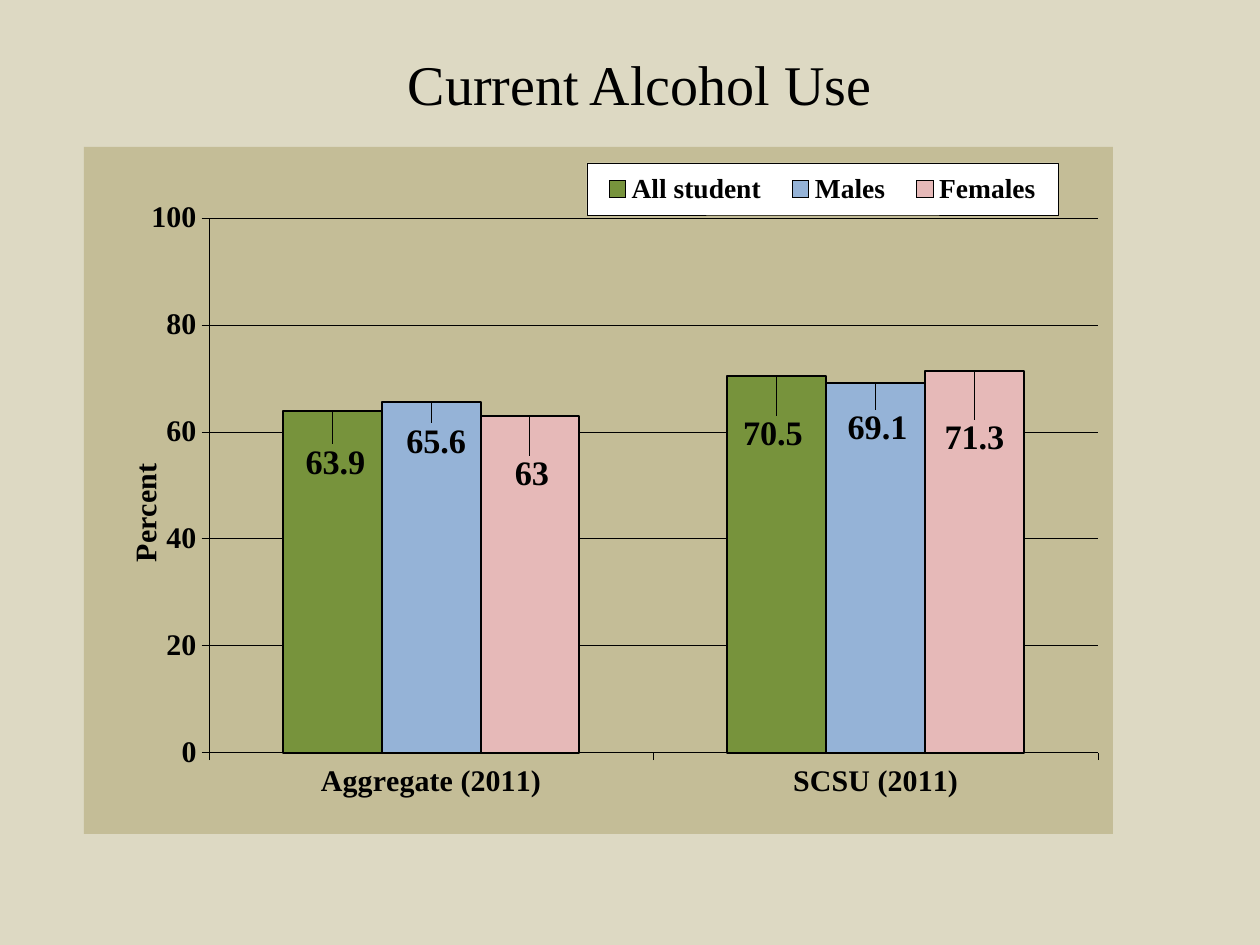
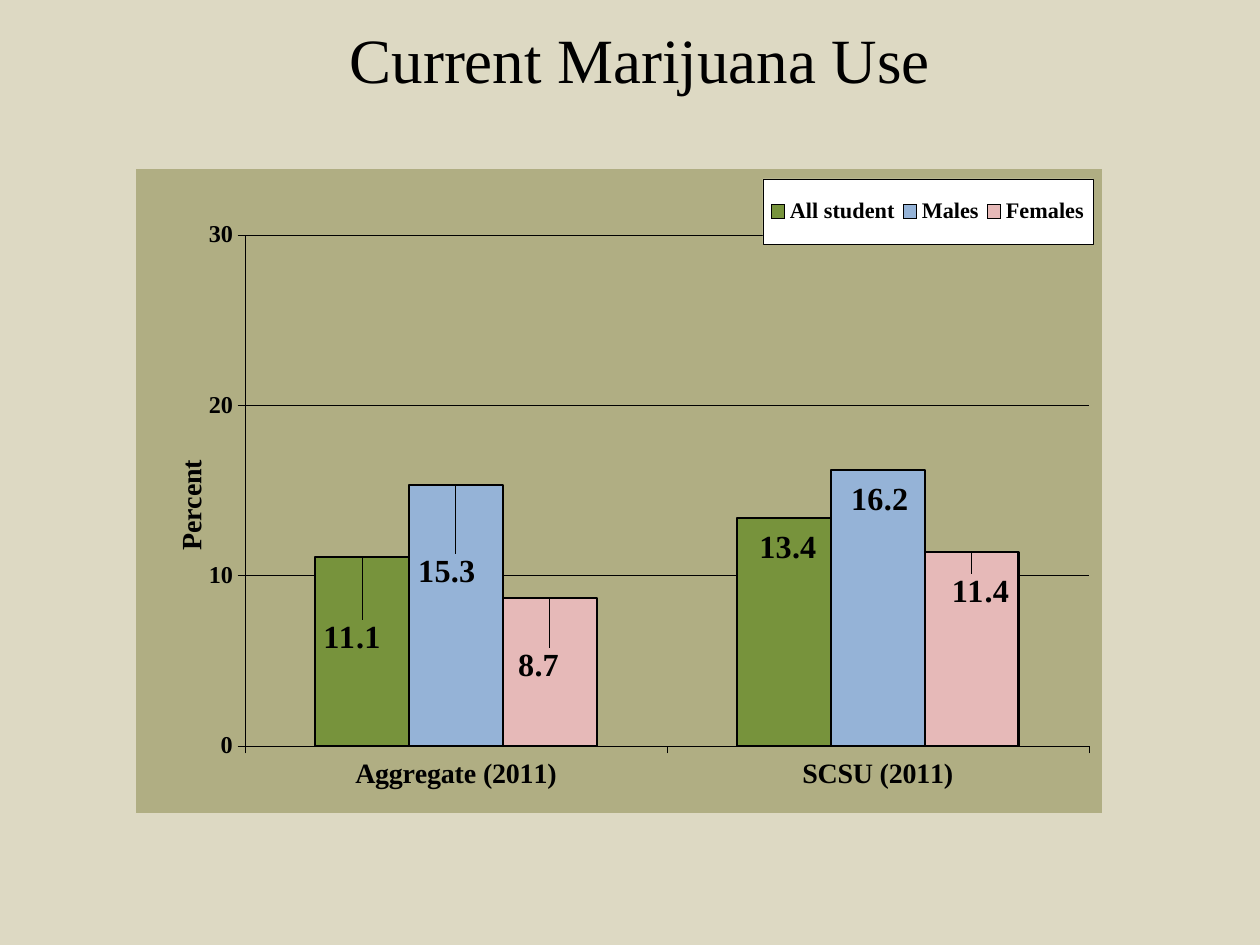
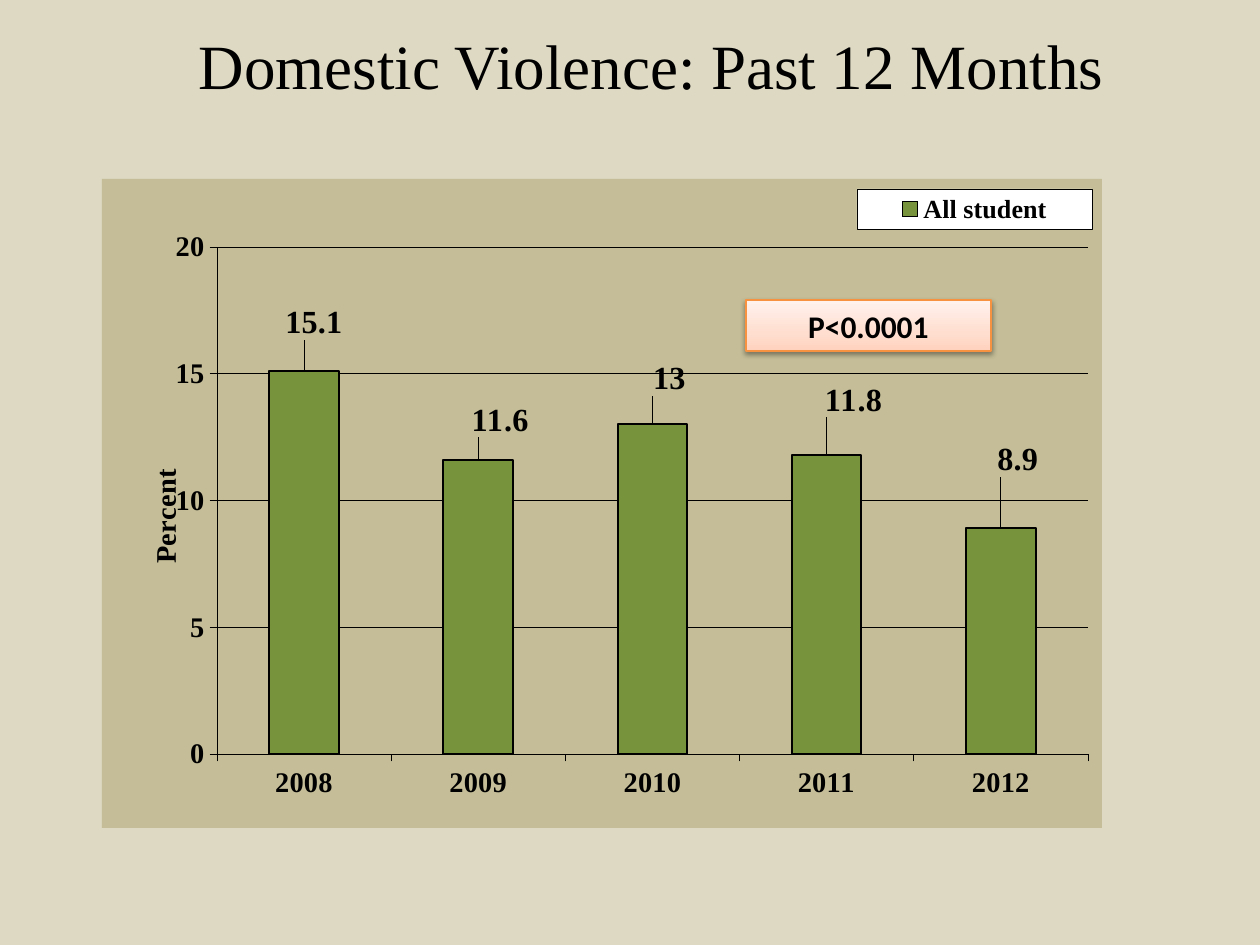
"""Build three survey slides, each with a title and a column chart."""
from copy import deepcopy

from pptx import Presentation
from pptx.chart.data import CategoryChartData
from pptx.dml.color import RGBColor
from pptx.enum.chart import XL_CHART_TYPE, XL_LABEL_POSITION, XL_LEGEND_POSITION, XL_TICK_LABEL_POSITION, XL_TICK_MARK
from pptx.enum.shapes import MSO_SHAPE
from pptx.enum.text import MSO_ANCHOR, PP_ALIGN
from pptx.oxml import parse_xml
from pptx.oxml.ns import nsdecls, qn
from pptx.util import Pt

PX = 914400 / 126
SERIF = "Times New Roman"
COLORS = {
    "background": "DDD9C3", "khaki": "C4BD97", "olive": "B0AE83",
    "black": "000000", "white": "FFFFFF", "badge line": "F69240",
    "All student": "77933C", "Males": "95B3D7", "Females": "E6B9B8",
}
BADGE_STOPS = [(0, "FFD2BD"), (0.35, "FFDED0"), (1, "FFF2ED")]
FILL = '<c:spPr %s><a:solidFill><a:srgbClr val="%s"/></a:solidFill>%s</c:spPr>'
NO_LINE = "<a:ln><a:noFill/></a:ln>"
BLACK_LINE = '<a:ln w="3810"><a:solidFill><a:srgbClr val="000000"/></a:solidFill></a:ln>'

SLIDES = [
    {
        "title": "Current Alcohol Use", "title size": 32, "title box": (73, 21, 1134, 189),
        "chart box": (84, 147, 1029, 687), "fill": "khaki",
        "plot box": (125, 71, 889, 535), "legend box": (503, 16, 471, 52), "axis title at": (37, 311),
        "sizes": {"category": 17.1, "value": 17.1, "legend": 15.7, "label": 19.6},
        "scale": (100, 20), "categories": ["Aggregate (2011)", "SCSU (2011)"],
        "series": {"All student": [63.9, 70.5], "Males": [65.6, 69.1], "Females": [63, 71.3]},
        "label offsets": [[(3, 76), (-4, 83)], [(5, 64), (2, 69)], [(2, 83), (0, 91)]],
    },
    {
        "title": "Current Marijuana Use", "title size": 36, "title box": (73, 21, 1134, 147),
        "chart box": (136, 169, 966, 644), "fill": "olive",
        "plot box": (109, 66, 844, 511), "legend box": (627, 10, 330, 65), "axis title at": (32, 286),
        "sizes": {"category": 16, "value": 13.8, "legend": 12.7, "label": 18.4},
        "scale": (30, 10), "categories": ["Aggregate (2011)", "SCSU (2011)"],
        "series": {"All student": [11.1, 13.4], "Males": [15.3, 16.2], "Females": [8.7, 11.4]},
        "label offsets": [[(-10, 103), (4, 52)], [(-9, 109), (2, 52)], [(-11, 90), (9, 62)]],
    },
    {
        "title": "Domestic Violence: Past 12 Months", "title size": 36, "title box": (116, 21, 1071, 158),
        "chart box": (102, 179, 1000, 649), "fill": "khaki",
        "plot box": (115, 68, 871, 507), "legend box": (755, 10, 235, 40), "axis title at": (39, 285),
        "sizes": {"category": 16.2, "value": 16.2, "legend": 14.9, "label": 18.4},
        "scale": (20, 5), "categories": ["2008", "2009", "2010", "2011", "2012"],
        "series": {"All student": [15.1, 11.6, 13, 11.8, 8.9]},
        "label offsets": [[(10, -26), (22, -17), (17, -23), (27, -32), (17, -46)]],
    },
]


def write_text(shape, text, size, font=SERIF, bold=False, bottom=6):
    """Write one centred line, with the bottom inset in px."""
    frame = shape.text_frame
    frame.word_wrap = True
    frame.vertical_anchor = MSO_ANCHOR.MIDDLE
    frame.margin_bottom = round(bottom * PX)
    paragraph = frame.paragraphs[0]
    paragraph.alignment = PP_ALIGN.CENTER
    run = paragraph.add_run()
    run.text = text
    run.font.size = Pt(size)
    run.font.name = font
    run.font.bold = bold
    run.font.color.rgb = RGBColor.from_string(COLORS["black"])


def place(element, index, chart_box, box, mode="edge", target=""):
    """Give a chart part a manual layout, from px measured inside the chart."""
    for layout in element.findall(qn("c:layout")):
        element.remove(layout)
    fractions = [length / chart_box[2 + number % 2] for number, length in enumerate(box)]
    modes = f'<c:xMode val="{mode}"/><c:yMode val="{mode}"/>' if mode else ""
    values = "".join(f'<c:{name} val="{value:.4f}"/>' for name, value in zip("xywh", fractions))
    element.insert(index, parse_xml(
        f'<c:layout {nsdecls("c")}><c:manualLayout>{target}{modes}{values}</c:manualLayout></c:layout>'))


presentation = Presentation()
presentation.slide_width = round(1260 * PX)
presentation.slide_height = round(945 * PX)
black = RGBColor.from_string(COLORS["black"])

for content in SLIDES:
    slide = presentation.slides.add_slide(presentation.slide_layouts[6])
    slide.background.fill.solid()
    slide.background.fill.fore_color.rgb = RGBColor.from_string(COLORS["background"])
    title = slide.shapes.add_textbox(*[round(length * PX) for length in content["title box"]])
    write_text(title, content["title"], content["title size"], bottom=6 + 2 * content["title size"])

    chart_data = CategoryChartData()
    chart_data.categories = content["categories"]
    for name, values in content["series"].items():
        chart_data.add_series(name, values)
    chart_box = content["chart box"]
    chart = slide.shapes.add_chart(
        XL_CHART_TYPE.COLUMN_CLUSTERED, *[round(length * PX) for length in chart_box], chart_data).chart
    sizes = content["sizes"]
    chart.has_title = False
    chart.has_legend = True
    chart.legend.position = XL_LEGEND_POSITION.TOP
    chart.legend.include_in_layout = False

    category_axis, value_axis = chart.category_axis, chart.value_axis
    value_axis.minimum_scale = 0
    value_axis.maximum_scale, value_axis.major_unit = content["scale"]
    value_axis.has_major_gridlines = True
    value_axis.axis_title.text_frame.text = "Percent"
    title_run = value_axis.axis_title.text_frame.paragraphs[0].runs[0]
    category_axis.tick_label_position = XL_TICK_LABEL_POSITION.LOW
    for axis in (category_axis, value_axis):
        axis.major_tick_mark = XL_TICK_MARK.OUTSIDE
        axis.minor_tick_mark = XL_TICK_MARK.NONE
    for line in (category_axis.format.line, value_axis.format.line, value_axis.major_gridlines.format.line):
        line.color.rgb = black
        line.width = Pt(0.3)

    plot = chart.plots[0]
    plot.gap_width = 150
    plot.overlap = 0
    plot.vary_by_categories = False
    fonts = [
        (chart.font, sizes["category"]), (title_run.font, sizes["category"]),
        (category_axis.tick_labels.font, sizes["category"]),
        (value_axis.tick_labels.font, sizes["value"]), (chart.legend.font, sizes["legend"]),
    ]
    for series, offsets in zip(plot.series, content["label offsets"]):
        series.format.fill.solid()
        series.format.fill.fore_color.rgb = RGBColor.from_string(COLORS[series.name])
        series.format.line.color.rgb = black
        series.format.line.width = Pt(1.2)
        series.invert_if_negative = False
        series.data_labels.show_value = True
        series.data_labels.position = XL_LABEL_POSITION.OUTSIDE_END
        fonts.append((series.data_labels.font, sizes["label"]))
        for number, offset in enumerate(offsets):
            label = series.points[number].data_label
            label.position = XL_LABEL_POSITION.OUTSIDE_END
            fonts.append((label.font, sizes["label"]))
        label_elements = series.data_labels._element.findall(qn("c:dLbl"))
        for label_element, offset in zip(label_elements, offsets):
            place(label_element, 1, chart_box, offset, mode="")
    for font, size in fonts:
        font.name = SERIF
        font.size = Pt(size)
        font.bold = True
        font.color.rgb = black

    axis_title = value_axis.axis_title._element
    axis_title.find(".//" + qn("a:bodyPr")).set("rot", "-5400000")
    place(axis_title, 1, chart_box, content["axis title at"])
    legend = chart.legend._element
    place(legend, 1, chart_box, content["legend box"])
    legend.find(qn("c:overlay")).addnext(parse_xml(FILL % (nsdecls("c", "a"), COLORS["white"], BLACK_LINE)))
    chart_element = chart._chartSpace.find(qn("c:chart"))
    plot_area = chart_element.find(qn("c:plotArea"))
    place(plot_area, 0, chart_box, content["plot box"], target='<c:layoutTarget val="inner"/>')
    area_fill = FILL % (nsdecls("c", "a"), COLORS[content["fill"]], NO_LINE)
    plot_area.append(parse_xml(area_fill))
    chart_element.addnext(parse_xml(area_fill))

badge = slide.shapes.add_shape(MSO_SHAPE.RECTANGLE, *[round(length * PX) for length in (746, 300, 245, 51)])
badge.fill.gradient()
badge.fill.gradient_angle = 90
stop_list = badge._element.find(".//" + qn("a:gsLst"))
stop_list.append(deepcopy(stop_list[0]))
for stop, (position, color) in zip(badge.fill.gradient_stops, BADGE_STOPS):
    stop.position = position
    stop.color.rgb = RGBColor.from_string(color)
badge.line.color.rgb = RGBColor.from_string(COLORS["badge line"])
badge.line.width = Pt(0.75)
badge.shadow.inherit = False
badge._element.spPr.find(qn("a:effectLst")).append(parse_xml(
    f'<a:outerShdw {nsdecls("a")} blurRad="40000" dist="20000" dir="5400000" rotWithShape="0">'
    f'<a:srgbClr val="{COLORS["black"]}"><a:alpha val="38000"/></a:srgbClr></a:outerShdw>'))
write_text(badge, "P<0.0001", 18, font="Calibri", bold=True)

presentation.save("out.pptx")
